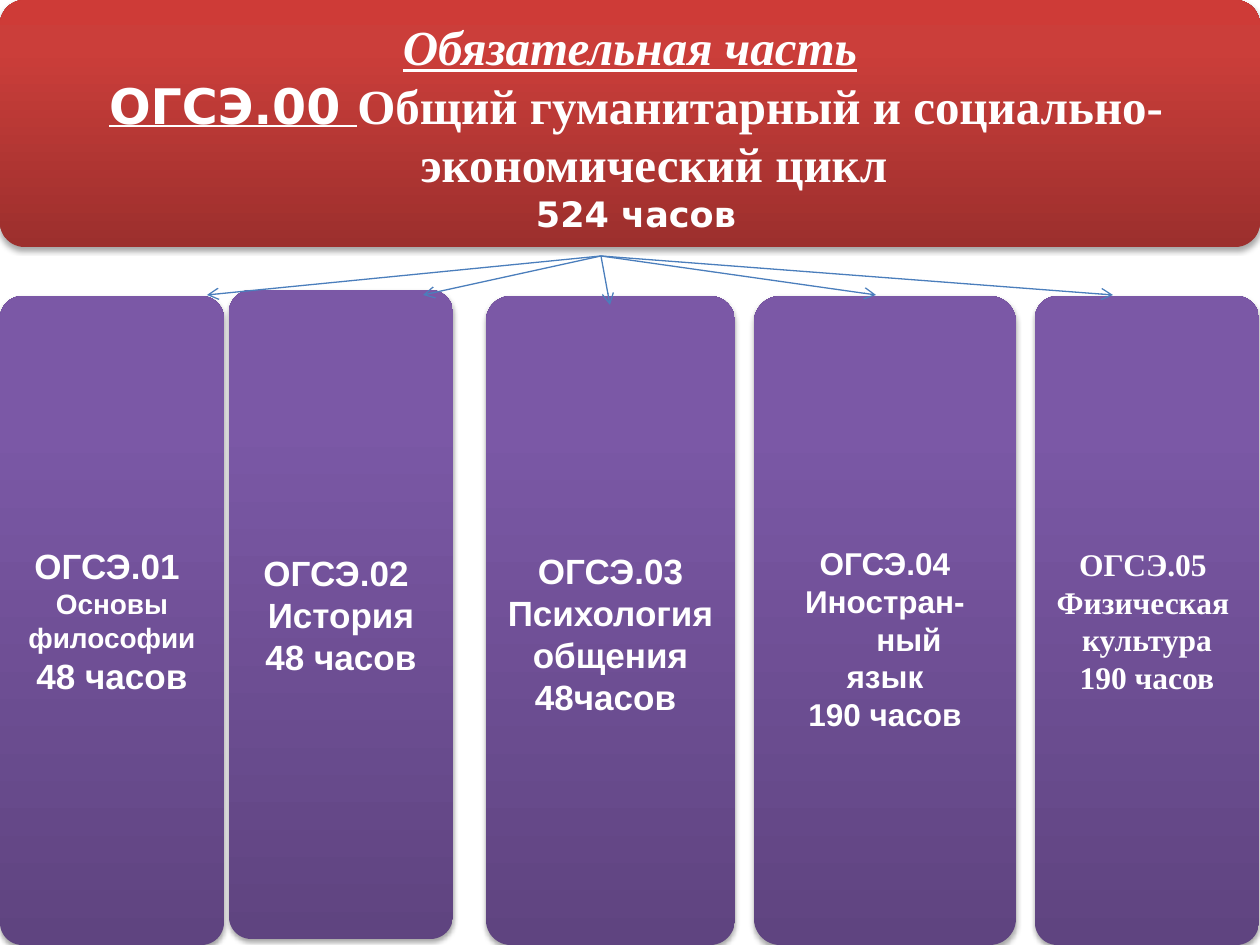
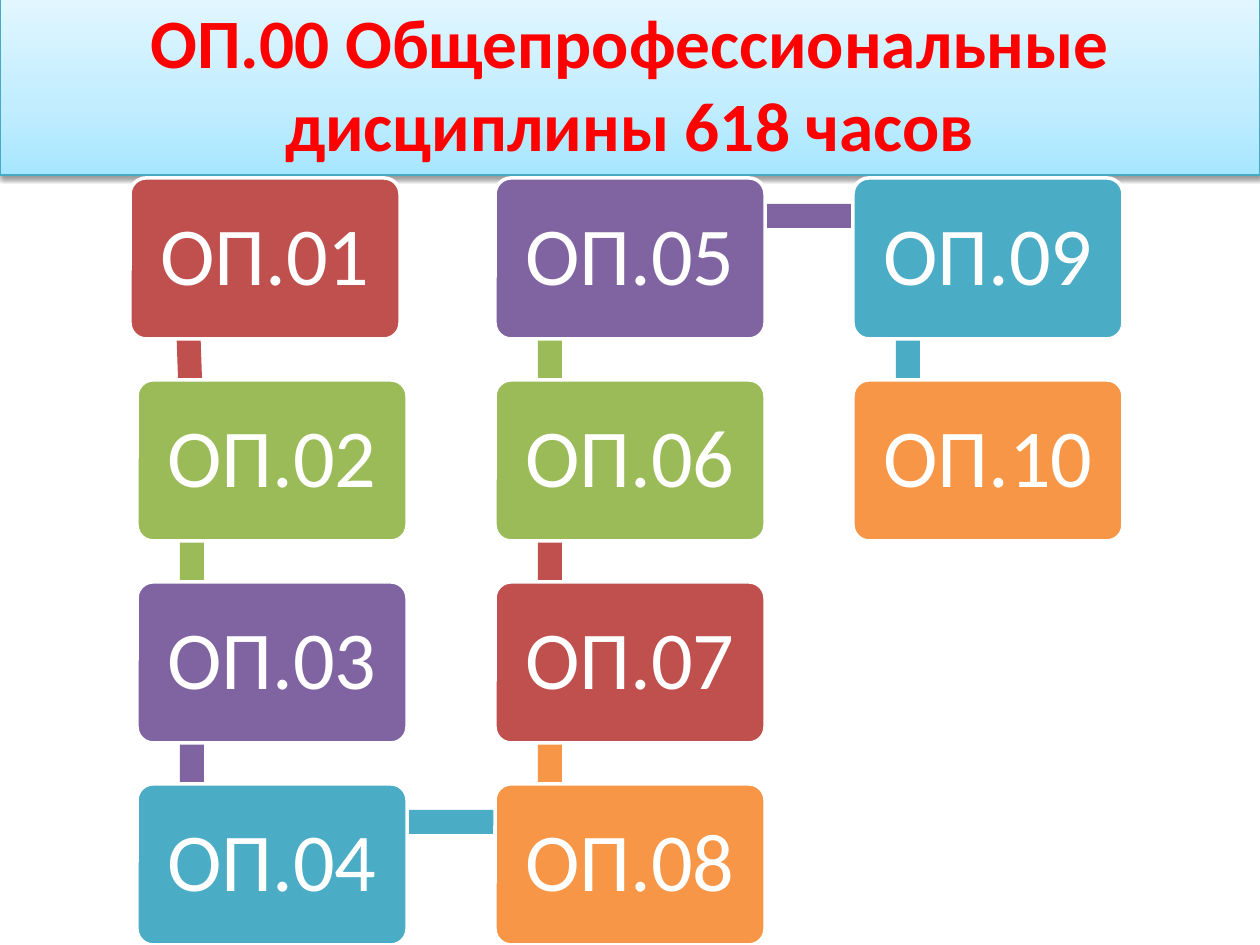
from math import atan2, degrees

from lxml.etree import SubElement
from pptx import Presentation
from pptx.dml.color import RGBColor
from pptx.enum.shapes import MSO_CONNECTOR, MSO_SHAPE
from pptx.enum.text import MSO_ANCHOR, PP_ALIGN
from pptx.oxml.ns import qn
from pptx.util import Emu, Pt

COLORS = {
    "white": "FFFFFF", "title": "FF0000", "title_line": "46AAC5",
    "arrow": "4B7EBC", "shadow": "000000",
    "red": "C0504D", "green": "9BBB59", "purple": "8064A2",
    "teal": "4BACC6", "orange": "F79646",
}
GRADIENTS = {
    "cycle": [(0, "9C2F2D"), (80, "CB3E3A"), (100, "CE3B37")],
    "subject": [(0, "5F4480"), (80, "7B58A6"), (100, "7C57A8")],
    "title": [(0, "A7E6FF"), (35, "C1EDFF"), (100, "E7F8FF")],
}
SERIF = {"name": "Times New Roman", "bold": True}
SANS = {"name": "Arial", "bold": True}
WIDE = {"name": "DejaVu Sans", "bold": True}
TITLE = {"name": "Calibri", "bold": True, "size": Pt(39.6)}
CODE = {"name": "Calibri", "size": Pt(47)}

HANGING = 48
COLUMN_LEFT, COLUMN_STEP = 137, 358
ROW_TOP, ROW_STEP = 178, 202
BOX_WIDTH, BOX_HEIGHT = 270, 161
LINK_LENGTH, LINK_THICKNESS = 200, 24


def px(length):
    return Emu(round(length * 914400 / 126))


def color(name):
    return RGBColor.from_string(COLORS[name])


def set_attributes(target, values):
    for name, value in values.items():
        setattr(target, name, value)


def add_block(slide, kind, bounds, fill=None):
    shape = slide.shapes.add_shape(kind, *map(px, bounds))
    shape.shadow.inherit = False
    shape.line.fill.background()
    if kind == MSO_SHAPE.ROUNDED_RECTANGLE:
        shape.adjustments[0] = 0.1
    if fill:
        shape.fill.solid()
        shape.fill.fore_color.rgb = color(fill)
    return shape


def set_outline(shape, name, width):
    shape.line.color.rgb = color(name)
    shape.line.width = Pt(width)


def set_gradient(shape, name):
    shape.fill.gradient()
    shape.fill.gradient_angle = 90
    stops = shape.element.spPr.find(qn("a:gradFill")).find(qn("a:gsLst"))
    for stop in list(stops):
        stops.remove(stop)
    for position, value in GRADIENTS[name]:
        stop = SubElement(stops, qn("a:gs"), pos=str(position * 1000))
        SubElement(stop, qn("a:srgbClr"), val=value)


def set_shadow(shape, opacity, distance):
    effects = shape.element.spPr.find(qn("a:effectLst"))
    shadow = SubElement(effects, qn("a:outerShdw"), blurRad=str(Pt(3.1)),
                        dist=str(Pt(distance)), dir="5400000", rotWithShape="0")
    tint = SubElement(shadow, qn("a:srgbClr"), val=COLORS["shadow"])
    SubElement(tint, qn("a:alpha"), val=str(opacity * 1000))


def write_text(shape, lines, inset, drop=0, hanging=0, spacing=None, text_color="white"):
    frame = shape.text_frame
    set_attributes(frame, {
        "word_wrap": True, "vertical_anchor": MSO_ANCHOR.MIDDLE,
        "margin_left": px(inset), "margin_right": px(inset),
        "margin_top": px(inset + 2 * drop), "margin_bottom": px(inset),
    })
    for index, runs in enumerate(lines):
        paragraph = frame.add_paragraph() if index else frame.paragraphs[0]
        set_attributes(paragraph, {"alignment": PP_ALIGN.CENTER, "line_spacing": spacing})
        if hanging:
            properties = paragraph._p.get_or_add_pPr()
            properties.set("marL", str(px(hanging)))
            properties.set("indent", str(px(-hanging)))
        for text, font in runs:
            run = paragraph.add_run()
            run.text = text
            set_attributes(run.font, font)
            run.font.color.rgb = color(text_color)


def add_panel(slide, bounds, gradient, lines, **layout):
    shape = add_block(slide, MSO_SHAPE.ROUNDED_RECTANGLE, bounds)
    set_gradient(shape, gradient)
    set_shadow(shape, 35, 1.8)
    write_text(shape, lines, **layout)


def add_arrow(slide, start, end):
    arrow = slide.shapes.add_connector(MSO_CONNECTOR.STRAIGHT, *map(px, start + end))
    set_outline(arrow, "arrow", 0.75)
    properties = arrow.element.spPr
    SubElement(properties.find(qn("a:ln")), qn("a:tailEnd"), type="arrow")
    SubElement(properties, qn("a:effectLst"))


def add_link(slide, start, end, fill):
    left, top = min(start[0], end[0]), min(start[1], end[1])
    if start[1] == end[1]:
        bounds = (left + 56, top + 26, COLUMN_STEP, LINK_THICKNESS)
        add_block(slide, MSO_SHAPE.RECTANGLE, bounds, fill)
        return
    middle = (start[0] + end[0]) // 2 + 55
    bounds = (middle - LINK_THICKNESS // 2, top + 40, LINK_THICKNESS, LINK_LENGTH)
    link = add_block(slide, MSO_SHAPE.RECTANGLE, bounds, fill)
    link.rotation = -degrees(atan2(end[0] - start[0], ROW_STEP))


def add_code_box(slide, corner, fill, text):
    bounds = (*corner, BOX_WIDTH, BOX_HEIGHT)
    box = add_block(slide, MSO_SHAPE.ROUNDED_RECTANGLE, bounds, fill)
    set_outline(box, "white", 2)
    write_text(box, [[(text, CODE)]], inset=25, spacing=0.9)


def build_cycle_slide(slide):
    large = {"size": Pt(28)}
    add_panel(slide, (0, 0, 1260, 247), "cycle", [
        [("Обязательная часть", SERIF | large | {"italic": True, "underline": True})],
        [(" ", SERIF | large), ("ОГСЭ.00 ", WIDE | large | {"underline": True}),
         ("Общий гуманитарный и социально-экономический цикл", SERIF | large)],
        [(" 524 часов", WIDE | {"size": Pt(20)})],
    ], inset=15, drop=2, hanging=HANGING)

    subjects = [
        ((0, 296, 224), SANS, 10, 0, 0,
         [("ОГСЭ.01 ", 20), ("Основы философии", 16), ("48 часов", 20)]),
        ((229, 290, 224), SANS, 10, 0, HANGING,
         [("ОГСЭ.02 ", 20), ("История", 20), ("48 часов", 20)]),
        ((486, 296, 249), SANS, 10, 13, HANGING,
         [("ОГСЭ.03", 20), ("Психология", 20), ("общения", 20), ("48часов ", 20)]),
        ((754, 296, 262), SANS, 19, 18, HANGING,
         [("ОГСЭ.04", 18), ("Иностран-ный", 18), ("язык", 18), ("190 часов", 18)]),
        ((1035, 296, 224), SERIF, 9, 0, HANGING,
         [("ОГСЭ.05 ", 18), ("Физическая ", 18), ("культура", 18), ("190 часов", 18)]),
    ]
    for place, font, inset, drop, hanging, texts in subjects:
        lines = [[(text, font | {"size": Pt(size)})] for text, size in texts]
        add_panel(slide, (*place, 649), "subject", lines,
                  inset=inset, drop=drop, hanging=hanging)

    for end in [(207, 295), (423, 295), (610, 305), (876, 295), (1113, 295)]:
        add_arrow(slide, (601, 256), end)


def build_disciplines_slide(slide):
    title = add_block(slide, MSO_SHAPE.RECTANGLE, (0, -20, 1260, 195))
    set_gradient(title, "title")
    set_outline(title, "title_line", 0.75)
    set_shadow(title, 38, 1.6)
    write_text(title, [[("ОП.00 Общепрофессиональные дисциплины 618 часов", TITLE)]],
               inset=10, drop=5, text_color="title")

    chain = [1, 2, 3, 4, 8, 7, 6, 5, 9, 10]
    fills = ["red", "green", "purple", "teal", "orange"]
    corners = [(COLUMN_LEFT + (number - 1) // 4 * COLUMN_STEP,
                ROW_TOP + (number - 1) % 4 * ROW_STEP) for number in chain]
    corners[0] = (COLUMN_LEFT - 7, ROW_TOP)
    for index, (number, corner) in enumerate(zip(chain, corners)):
        fill = fills[index % len(fills)]
        if index + 1 < len(chain):
            add_link(slide, corner, corners[index + 1], fill)
        add_code_box(slide, corner, fill, f"ОП.{number:02}")


def main():
    presentation = Presentation()
    set_attributes(presentation, {"slide_width": px(1260), "slide_height": px(945)})
    for build in (build_cycle_slide, build_disciplines_slide):
        build(presentation.slides.add_slide(presentation.slide_layouts[6]))
    presentation.save("out.pptx")


if __name__ == "__main__":
    main()
